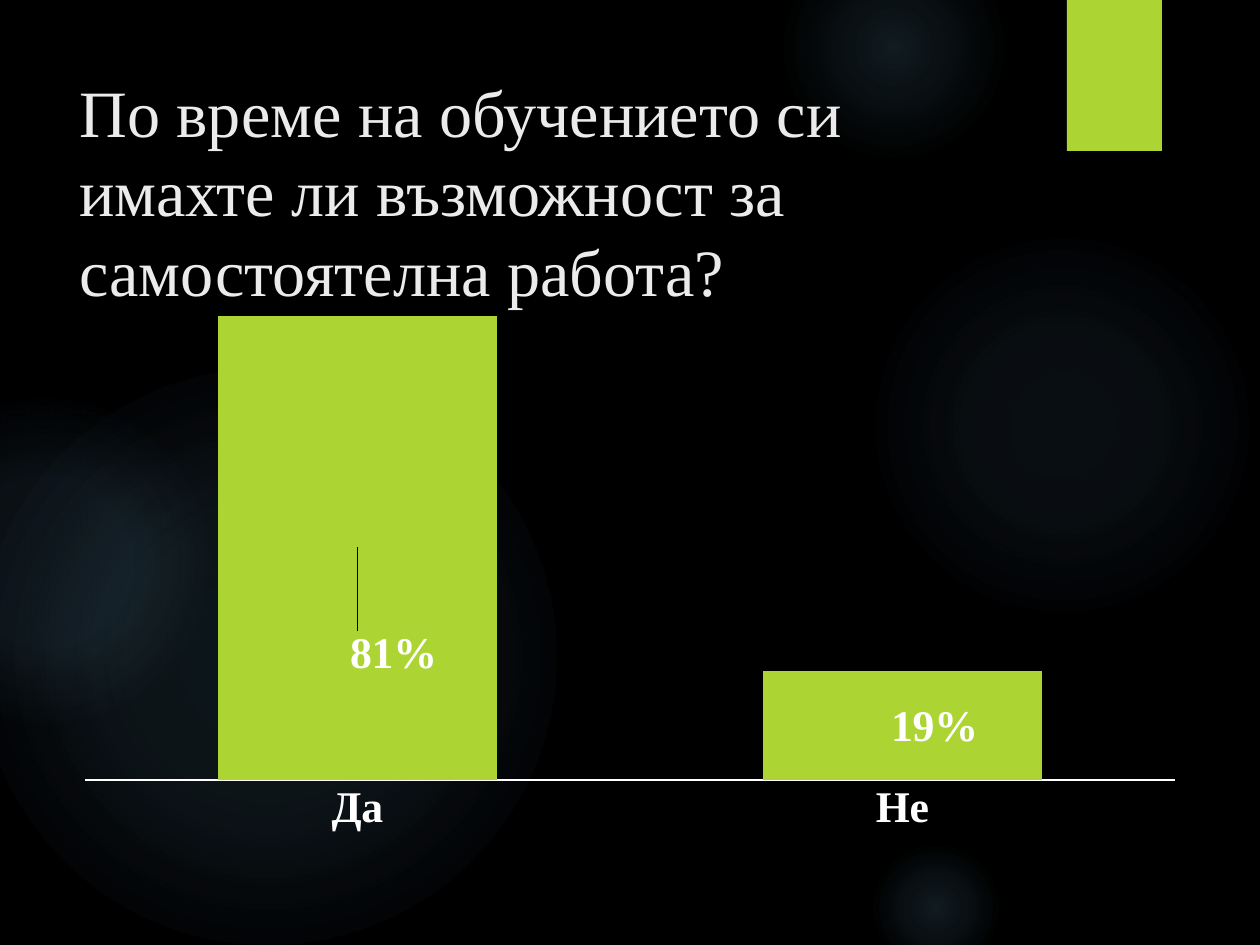
import pptx
import pptx.chart.data
import pptx.dml.color
import pptx.enum.chart
import pptx.enum.shapes
import pptx.enum.text
import pptx.oxml
import pptx.oxml.ns
import pptx.util

# Content
TITLE = "По време на обучението си имахте ли възможност за самостоятелна работа?"
ANSWERS = {"Да": 0.81, "Не": 0.19}
LABEL_SHIFTS = [(36, 106), (32, 2)]  # from the middle of each bar, px

# Glows: left, top, diameter in px, then (stop %, opacity %) pairs
GLOWS = [
    (868, 231, 388, [(0, 7), (36, 6), (69, 0)]),
    (784, -63, 220, [(0, 14), (36, 7), (73, 0)]),
    (868, 840, 136, [(0, 14), (36, 7), (66, 0)]),
    (-21, 368, 577, [(0, 11), (36, 10), (75, 0)]),
    (-116, 399, 325, [(0, 8), (36, 8), (72, 0)]),
]
TAB = (1067, 0, 95, 151)
TITLE_BOX = (67, 63, 973, 193)
CHART_BOX = (63, 252, 1134, 592)
PLOT_BOX = (85, 264, 1090, 516)


class Theme:
    background = "000000"
    accent = "ACD433"
    glow = "7AC4F0"
    title = "EBEBEB"
    text = "FFFFFF"
    font = "Times New Roman"
    chart_font = "League Spartan"
    title_size = 37.8
    title_leading = 45.4
    label_size = 25
    chart_size = 18


SHAPES = pptx.enum.shapes.MSO_SHAPE


def px(value):
    return round(value * 914400 / 126)


def rgb(code):
    return pptx.dml.color.RGBColor.from_string(code)


def xml(tag, attributes="", inner=""):
    prefix = tag.split(":")[0]
    names = pptx.oxml.ns.nsdecls(*{prefix, "a"})
    return pptx.oxml.parse_xml(f"<{tag} {names} {attributes}>{inner}</{tag}>")


def set_font(font, size, color, name=Theme.font, bold=False):
    font.size = pptx.util.Pt(size)
    font.color.rgb = rgb(color)
    font.name = name
    font.bold = bold


def add_shape(page, kind, box):
    shape = page.shapes.add_shape(kind, *map(px, box))
    shape.shadow.inherit = False
    shape.fill.solid()
    shape.fill.fore_color.rgb = rgb(Theme.accent)
    shape.line.fill.background()
    return shape


def add_glow(page, left, top, diameter, stops):
    shape = add_shape(page, SHAPES.OVAL, (left, top, diameter, diameter))
    marks = "".join(
        f'<a:gs pos="{stop * 1000}"><a:srgbClr val="{Theme.glow}">'
        f'<a:alpha val="{opacity * 1000}"/></a:srgbClr></a:gs>'
        for stop, opacity in stops)
    gradient = xml("a:gradFill", 'rotWithShape="1"',
                   f'<a:gsLst>{marks}</a:gsLst><a:path path="circle">'
                   '<a:fillToRect l="50000" t="50000" r="50000" b="50000"/></a:path>')
    properties = shape._element.spPr
    properties.replace(properties.find(pptx.oxml.ns.qn("a:solidFill")), gradient)


def add_tab(page):
    shape = add_shape(page, SHAPES.RECTANGLE, TAB)
    effects = shape._element.spPr.find(pptx.oxml.ns.qn("a:effectLst"))
    effects.append(xml("a:outerShdw", 'blurRad="38100" dist="25400" dir="5400000"',
                       '<a:srgbClr val="000000"><a:alpha val="45000"/></a:srgbClr>'))


def add_text(page, text, box, size, color, leading):
    frame = page.shapes.add_textbox(*map(px, box)).text_frame
    frame.word_wrap = True
    frame.vertical_anchor = pptx.enum.text.MSO_ANCHOR.TOP
    frame.margin_top = px(8)
    para = frame.paragraphs[0]
    para.line_spacing = pptx.util.Pt(leading)
    span = para.add_run()
    span.text = text
    set_font(span.font, size, color)


def manual_layout(**values):
    inner = "".join(f'<c:{key} val="{value}"/>' for key, value in values.items())
    return xml("c:layout", "", f"<c:manualLayout>{inner}</c:manualLayout>")


def add_answer_chart(page):
    data = pptx.chart.data.CategoryChartData(number_format="0%")
    data.categories = list(ANSWERS)
    data.add_series("Series 1", list(ANSWERS.values()))
    kind = pptx.enum.chart.XL_CHART_TYPE.COLUMN_STACKED
    chart = page.shapes.add_chart(kind, *map(px, CHART_BOX), data).chart
    chart.has_title = False
    chart.has_legend = False
    set_font(chart.font, Theme.chart_size, Theme.text, Theme.chart_font)

    # Axes
    none = pptx.enum.chart.XL_TICK_MARK.NONE
    axis = chart.category_axis
    axis.major_tick_mark = axis.minor_tick_mark = none
    axis.format.line.color.rgb = rgb(Theme.text)
    axis.format.line.width = pptx.util.Pt(1)
    set_font(axis.tick_labels.font, Theme.label_size, Theme.text, bold=True)
    values = chart.value_axis
    values.minimum_scale, values.maximum_scale = 0, 0.9
    values.has_major_gridlines = False
    values.visible = False

    # Bars
    plot = chart.plots[0]
    plot.gap_width, plot.overlap = 95, 100
    plot.vary_by_categories = False
    series = plot.series[0]
    series.format.fill.solid()
    series.format.fill.fore_color.rgb = rgb(Theme.accent)

    # Plot area and value labels
    left, top, width, height = CHART_BOX
    plot_left, plot_top, plot_width, plot_height = PLOT_BOX
    area = chart._chartSpace.chart.plotArea
    for old in area.findall(pptx.oxml.ns.qn("c:layout")):
        area.remove(old)
    area.insert(0, manual_layout(
        layoutTarget="inner", xMode="edge", yMode="edge",
        x=round((plot_left - left) / width, 4), y=round((plot_top - top) / height, 4),
        w=round(plot_width / width, 4), h=round(plot_height / height, 4)))
    for index in range(len(ANSWERS)):
        set_font(series.points[index].data_label.font,
                 Theme.label_size, Theme.text, bold=True)
    for label, (right, down) in zip(area.xpath(".//c:dLbl"), LABEL_SHIFTS):
        label.insert(1, manual_layout(x=round(right / width, 4), y=round(down / height, 4)))
        label.insert(2, xml("c:numFmt", 'formatCode="0%" sourceLinked="0"'))


def main():
    deck = pptx.Presentation()
    deck.slide_width, deck.slide_height = px(1260), px(945)
    page = deck.slides.add_slide(deck.slide_layouts[6])
    page.background.fill.solid()
    page.background.fill.fore_color.rgb = rgb(Theme.background)

    # Backdrop
    for glow in GLOWS:
        add_glow(page, *glow)
    add_tab(page)

    # Question and answers
    add_text(page, TITLE, TITLE_BOX, size=Theme.title_size,
             color=Theme.title, leading=Theme.title_leading)
    add_answer_chart(page)
    deck.save("out.pptx")


if __name__ == "__main__":
    main()
